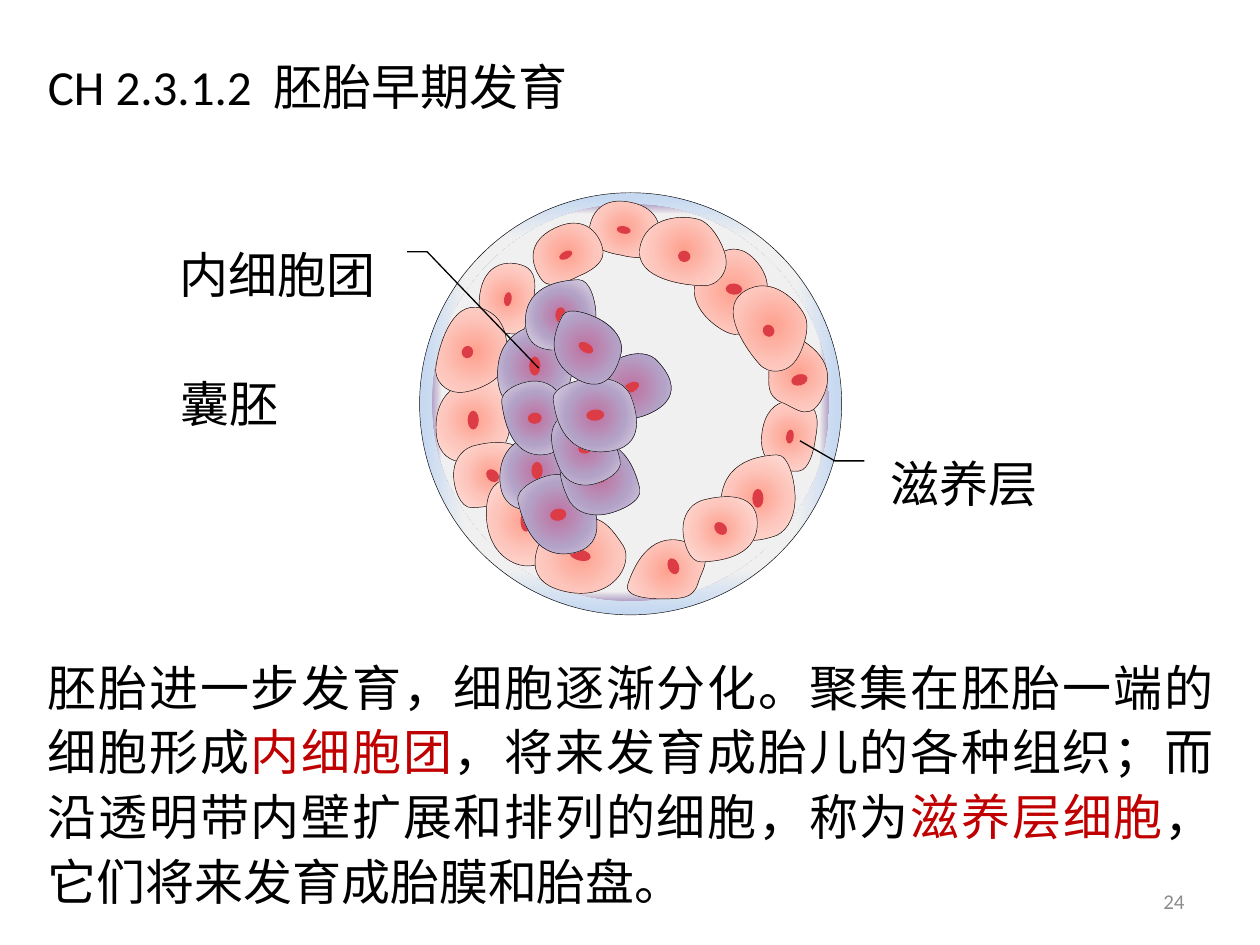
"""Build the slide on early embryo development with a drawn blastocyst."""
from lxml import etree
from pptx import Presentation
from pptx import util as u
from pptx.dml.color import RGBColor
from pptx.enum import shapes, text
from pptx.oxml.ns import qn

Pt = u.Pt
COLORS = {"black": "000000", "red": "C00000", "grey": "8C8C8C", "nucleus": "DC3C46"}
GRADIENTS = {
    "zona": ("shape", [(13, "F0F0F0"), (78, "F0F0F0"), (98, "C6D9F1")]),
    "cavity": ("shape", [(13, "F0F0F0"), (95, "F0F0F0"), (100, "B3A2C7")]),
    "outer": ("circle", [(0, "FEA08E"), (50, "FDC5BB"), (100, "FDE2DE")]),
    "inner": ("circle", [(0, "C070A0"), (50, "B3A2C7"), (100, "E6E0EC")]),
}
OUTLINES = {
    "small": [(48, -2), (49, -19), (47, -40), (29, -47), (13, -54), (-51, -57),
              (-51, -1), (-51, 55), (10, 51), (28, 47), (46, 43), (49, 14)],
    "round": [(50, 0), (50, -18), (42, -51), (25, -50), (8, -49), (-50, -46),
              (-50, 9), (-50, 63), (6, 50), (25, 44), (42, 37), (50, 19)],
    "wide": [(49, 6), (47, -9), (30, -42), (13, -48), (-5, -53), (-50, -42),
             (-50, 8), (-50, 56), (9, 52), (28, 48), (45, 45), (52, 22)],
    "large": [(50, 2), (50, 18), (42, 27), (24, 44), (5, 60), (-50, 47),
              (-50, -9), (-50, -65), (8, -47), (26, -44), (42, -43), (50, -12)],
    "bent": [(-42, 12), (-36, 27), (-33, 46), (-8, 47), (17, 47), (48, 63),
             (49, 11), (49, -42), (-12, -49), (-37, -50), (-61, -51), (-47, -4)],
}
NUCLEUS = {"small": (0.14, 0.2), "round": (0.15, 0.22), "wide": (0.14, 0.17),
           "large": (0.14, 0.24), "bent": (0.17, 0.24)}
OUTER = [
    ("small", 289.8, 170.6, 31, 40.3, 9.2, 0.4, 0.4, 7.7),
    ("round", 270.4, 239.8, 42.5, 49, 0, 0, 0.3, 0),
    ("wide", 270.7, 201.2, 50.4, 38.2, 106.5, -3.6, 0, 105),
    ("round", 280.4, 271.4, 42.5, 37.4, 180, 1.1, 0.4, 134.8),
    ("large", 300.2, 297.7, 44.6, 51.1, 0, 0.4, 0, 0),
    ("small", 356.8, 131, 31, 40.3, 101.4, -0.4, 0.4, 100),
    ("small", 451.1, 249.1, 31, 40.3, 9.2, 0.3, 0.4, 7.7),
    ("round", 418.7, 166.3, 42.5, 43.2, 139.5, 0.7, -1.1, 94.3),
    ("bent", 455.8, 213.5, 37.4, 39.6, 20.7, 1, 3.6, 74.5),
    ("wide", 391, 142.9, 50.4, 38.2, 9.4, 0, 3.6, 8),
    ("small", 323.6, 144.7, 31, 40.3, 64.5, -0.3, 1.1, 63),
    ("round", 433.1, 284.4, 42.5, 49, 0, 0, 0.4, 0),
    ("bent", 381.6, 325.8, 37.4, 39.6, 285.6, 3.2, -2.2, 339.4),
    ("round", 411.5, 302.4, 42.5, 37.4, 180, 0.3, -0.4, 134.8),
    ("wide", 441.4, 186.1, 50.4, 38.2, 56.7, -2.2, 2.9, 55.2),
    ("large", 331.9, 317.2, 44.6, 51.1, 283.4, -0.3, 0, 283.4),
]
INNER = [
    (305.6, 209.2, 42.5, 49.7, 0), (320.4, 180, 40.3, 40.3, 0),
    (306.9, 268.9, 42.5, 45.4, 0), (319, 294.1, 46.1, 42.5, 259.3),
    (305.6, 239, 42.5, 36, 264.7), (342.4, 272.9, 42.5, 43.2, 79.3),
    (334.4, 256, 42.5, 36.7, 79.3), (360.7, 221.4, 36, 43.9, 244.3),
    (340.2, 237.2, 42.5, 46.8, 265.9), (334.8, 198.7, 36, 41.8, 301),
]
CELLS = [("outer", *c) for c in OUTER]
CELLS += [("inner", "round", *c, 0, 0, c[-1]) for c in INNER]


def paint(sp, fill, line=None):
    """Fill a shape with a radial gradient or plain colour and set its outline."""
    sp.shadow.inherit = False
    if fill in GRADIENTS:
        path, stops = GRADIENTS[fill]
        sp.fill.gradient()
        grad = sp._element.spPr.find(qn("a:gradFill"))
        for child in list(grad):
            grad.remove(child)
        gs_list = etree.SubElement(grad, qn("a:gsLst"))
        for pos, color in stops:
            gs = etree.SubElement(gs_list, qn("a:gs"), pos=str(pos * 1000))
            etree.SubElement(gs, qn("a:srgbClr"), val=color)
        node = etree.SubElement(grad, qn("a:path"), path=path)
        etree.SubElement(node, qn("a:fillToRect"), l="50000", t="50000", r="50000", b="50000")
    elif fill:
        sp.fill.solid()
        sp.fill.fore_color.rgb = RGBColor.from_string(COLORS[fill])
    else:
        sp.fill.background()
    if line:
        sp.line.color.rgb = RGBColor.from_string(COLORS["black"])
        sp.line.width = Pt(line)
    else:
        sp.line.fill.background()


def write(sp, parts, align, size=28, anchor=text.MSO_ANCHOR.MIDDLE, wrap=True):
    """Write one paragraph of (text, colour) runs into a shape."""
    tf = sp.text_frame
    tf.auto_size = text.MSO_AUTO_SIZE.NONE
    tf.word_wrap = wrap
    tf.vertical_anchor = anchor
    p = tf.paragraphs[0]
    p.alignment = align
    for words, color in parts:
        r = p.add_run()
        r.text = words
        r.font.size = Pt(size)
        r.font.name = "Calibri"
        r.font.color.rgb = RGBColor.from_string(COLORS[color])
    return p


AL = text.PP_ALIGN
SHAPE = shapes.MSO_SHAPE
prs = Presentation()
prs.slide_width, prs.slide_height = Pt(720), Pt(540)
s = prs.slides.add_slide(prs.slide_layouts[5])

title = s.shapes.title
title.left, title.top, title.width, title.height = Pt(20.16), Pt(25.92), Pt(680.4), Pt(46.08)
write(title, [("CH 2.3.1.2  胚胎早期发育", "black")], AL.JUSTIFY)

for name, left, top, size, line in [("zona", 239.76, 110.16, 241.2, 0.25),
                                    ("cavity", 246.96, 116.64, 226.8, None)]:
    sp = s.shapes.add_shape(SHAPE.OVAL, Pt(left), Pt(top), Pt(size), Pt(size))
    paint(sp, name, line)

body = s.shapes.add_textbox(Pt(20.16), Pt(368.64), Pt(680.4), Pt(176.4))
p = write(body, [
    ("胚胎进一步发育，细胞逐渐分化。聚集在胚胎一端的细胞形成", "black"),
    ("内细胞团", "red"),
    ("，将来发育成胎儿的各种组织；而沿透明带内壁扩展和排列的细胞，称为", "black"),
    ("滋养层细胞", "red"),
    ("，它们将来发育成胎膜和胎盘。", "black"),
], AL.JUSTIFY, anchor=text.MSO_ANCHOR.TOP)
p.line_spacing = 1.1

number = s.shapes.add_textbox(Pt(516.24), Pt(500.4), Pt(167.76), Pt(28.8))
write(number, [("24", "grey")], AL.RIGHT, size=12)

for layer, kind, cx, cy, w, h, rot, dx, dy, turn in CELLS:
    knots = [(x + 50, y + 50) for x, y in OUTLINES[kind]]
    builder = s.shapes.build_freeform(*knots[0])
    builder.add_line_segments(knots[3::3], close=True)
    cell = builder.convert_to_shape()
    cell.left, cell.top, cell.width, cell.height = Pt(cx - w / 2), Pt(cy - h / 2), Pt(w), Pt(h)
    cell.rotation = rot
    outline = cell._element.spPr.find(".//" + qn("a:path"))
    outline.set("w", "100")
    outline.set("h", "100")
    for child in list(outline):
        outline.remove(child)
    steps = [("a:moveTo", knots[:1])]
    steps += [("a:cubicBezTo", (knots[1:] + knots[:1])[i:i + 3]) for i in range(0, 12, 3)]
    for tag, points in steps + [("a:close", [])]:
        step = etree.SubElement(outline, qn(tag))
        for x, y in points:
            etree.SubElement(step, qn("a:pt"), x=str(x), y=str(y))
    paint(cell, layer, 0.25)
    nw, nh = w * NUCLEUS[kind][0], h * NUCLEUS[kind][1]
    nucleus = s.shapes.add_shape(SHAPE.OVAL, Pt(cx + dx - nw / 2), Pt(cy + dy - nh / 2),
                                 Pt(nw), Pt(nh))
    nucleus.rotation = turn
    paint(nucleus, "nucleus")

stage = s.shapes.add_textbox(Pt(24.48), Pt(209.52), Pt(141.84), Pt(41.04))
write(stage, [("囊胚", "black")], AL.RIGHT)

for words, left, top, width, align, flip, adjust in [
    ("内细胞团", 95.04, 136.08, 127.44, AL.CENTER, True,
     (0.19, -0.08, 0.19, -0.17, 1.81, -0.67)),
    ("滋养层", 501.84, 255.6, 99.36, AL.LEFT, False,
     (0.19, -0.08, 0.19, -0.25, -0.09, -0.45)),
]:
    sp = s.shapes.add_shape(SHAPE.LINE_CALLOUT_2_NO_BORDER, Pt(left), Pt(top), Pt(width), Pt(41.04))
    for i, value in enumerate(adjust):
        sp.adjustments[i] = value
    if flip:
        sp._element.spPr.find(qn("a:xfrm")).set("flipH", "1")
    paint(sp, None, 0.75)
    write(sp, [(words, "black")], align, wrap=False)

prs.save("out.pptx")
